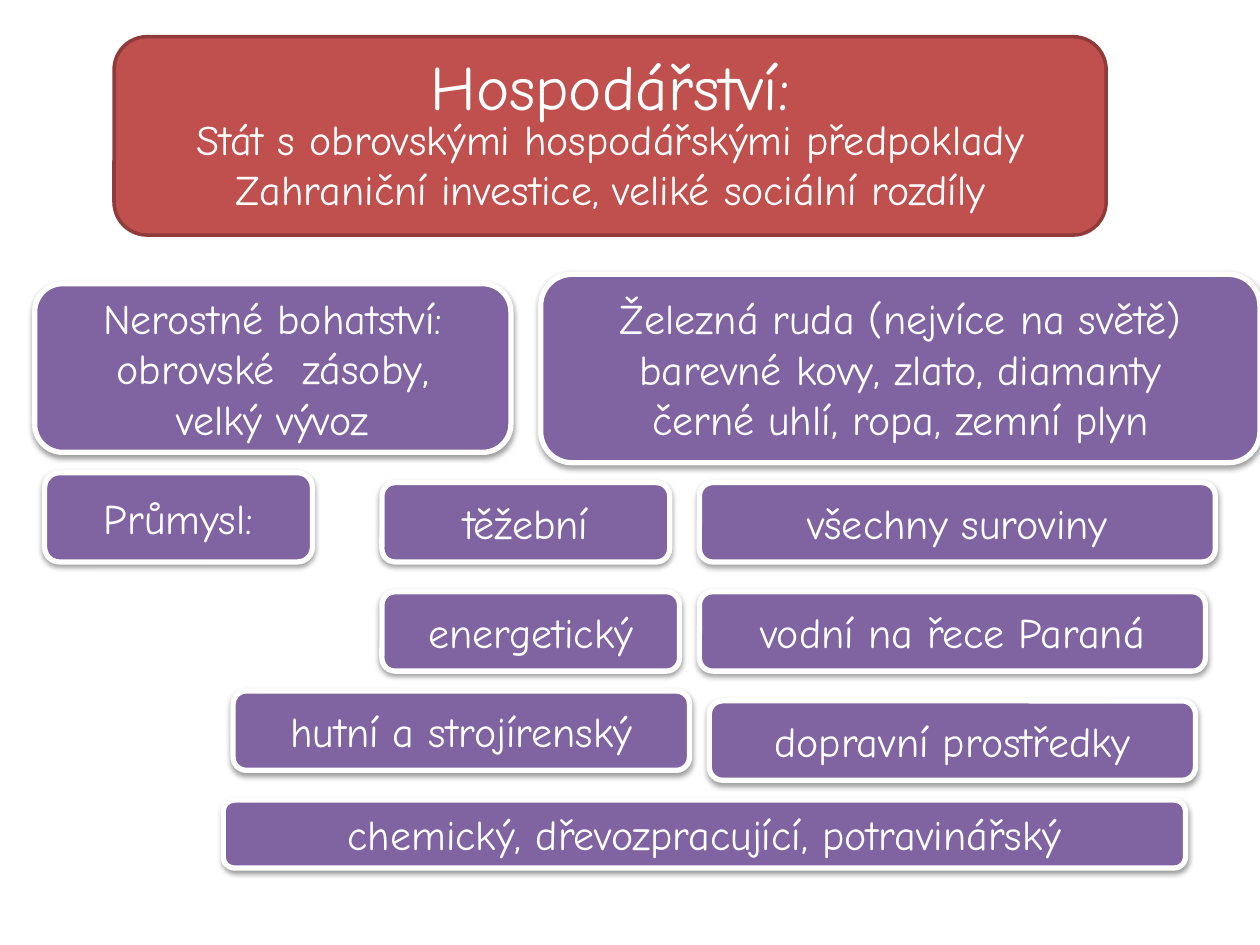
from lxml.etree import SubElement
from pptx import Presentation
from pptx.dml.color import RGBColor
from pptx.enum.shapes import MSO_SHAPE
from pptx.enum.text import MSO_ANCHOR, PP_ALIGN
from pptx.oxml.ns import qn
from pptx.util import Cm, Pt

WHITE = RGBColor(0xFF, 0xFF, 0xFF)
PURPLE = RGBColor(0x80, 0x64, 0xA2)
RED = RGBColor(0xC0, 0x50, 0x4D)
DARK_RED = RGBColor(0x8E, 0x3B, 0x39)
FONT = "Comic Neue"

HEADING = "Hospodářství:"
SUMMARY = [
    "Stát s obrovskými hospodářskými předpoklady",
    "Zahraniční investice, veliké sociální rozdíly",
]
HEADER_BOX = (2.3, 0.74, 20, 4)     # left, top, width, height in cm
HEADING_BOX = (2.3, 0.96, 20, 1.5)

BRANCH_LEFT, DETAIL_LEFT = 7.7, 14.1
ROW_HEIGHT = 1.6
EXTRACTION_TOP, ENERGY_TOP = 9.73, 11.93

CARDS = [
    (["Nerostné bohatství:", "obrovské\u00a0 zásoby,".replace("\u00a0", " "), "velký vývoz"],
     (0.7, 5.72, 9.6, 3.4)),
    (["Železná ruda (nejvíce na světě)", "barevné kovy, zlato, diamanty",
      "černé uhlí, ropa, zemní plyn"], (10.9, 5.53, 14.5, 3.8)),
    (["Průmysl:"], (0.9, 9.53, 5.4, 1.8)),
    (["těžební"], (BRANCH_LEFT, EXTRACTION_TOP, 5.8, ROW_HEIGHT)),
    (["všechny suroviny"], (DETAIL_LEFT, EXTRACTION_TOP, 10.4, ROW_HEIGHT)),
    (["energetický"], (BRANCH_LEFT, ENERGY_TOP, 6, ROW_HEIGHT)),
    (["vodní na řece Paraná"], (DETAIL_LEFT, ENERGY_TOP, 10.2, ROW_HEIGHT)),
    (["hutní a strojírenský"], (4.7, 13.93, 9.2, ROW_HEIGHT)),
    (["dopravní prostředky"], (14.3, 14.13, 9.8, ROW_HEIGHT)),
    (["chemický, dřevozpracující, potravinářský"], (4.5, 16.13, 19.4, 1.37)),
]


def write(frame, lines, size=24, anchor=MSO_ANCHOR.MIDDLE):
    frame.word_wrap = True
    frame.vertical_anchor = anchor
    for index, line in enumerate(lines):
        paragraph = frame.paragraphs[0] if index == 0 else frame.add_paragraph()
        paragraph.alignment = PP_ALIGN.CENTER
        run = paragraph.add_run()
        run.text = line
        run.font.name = FONT
        run.font.size = Pt(size)
        run.font.color.rgb = WHITE


def add_rounded_box(slide, box, fill, outline, outline_width):
    shape = slide.shapes.add_shape(MSO_SHAPE.ROUNDED_RECTANGLE, *map(Cm, box))
    shape.shadow.inherit = False
    shape.fill.solid()
    shape.fill.fore_color.rgb = fill
    shape.line.color.rgb = outline
    shape.line.width = Pt(outline_width)
    return shape


def add_soft_shadow(shape):
    effects = shape._element.spPr.find(qn("a:effectLst"))
    shadow = SubElement(effects, qn("a:outerShdw"), blurRad="40000",
                        dist="20000", dir="5400000", rotWithShape="0")
    color = SubElement(shadow, qn("a:srgbClr"), val="000000")
    SubElement(color, qn("a:alpha"), val="38000")


def add_header(slide):
    header = add_rounded_box(slide, HEADER_BOX, RED, DARK_RED, 2)
    header.text_frame.margin_bottom = Cm(0.23)
    write(header.text_frame, SUMMARY, anchor=MSO_ANCHOR.BOTTOM)

    heading = slide.shapes.title
    heading.left, heading.top, heading.width, heading.height = map(Cm, HEADING_BOX)
    heading.text_frame.margin_top = heading.text_frame.margin_bottom = 0
    write(heading.text_frame, [HEADING], size=36)
    header._element.addnext(heading._element)  # heading lies over the red box


def main():
    prs = Presentation()
    prs.slide_width, prs.slide_height = Cm(25.4), Cm(19.05)
    slide = prs.slides.add_slide(prs.slide_layouts[5])
    for lines, box in CARDS:
        card = add_rounded_box(slide, box, PURPLE, WHITE, 3)
        add_soft_shadow(card)
        write(card.text_frame, lines)
    add_header(slide)
    prs.save("out.pptx")


if __name__ == "__main__":
    main()
